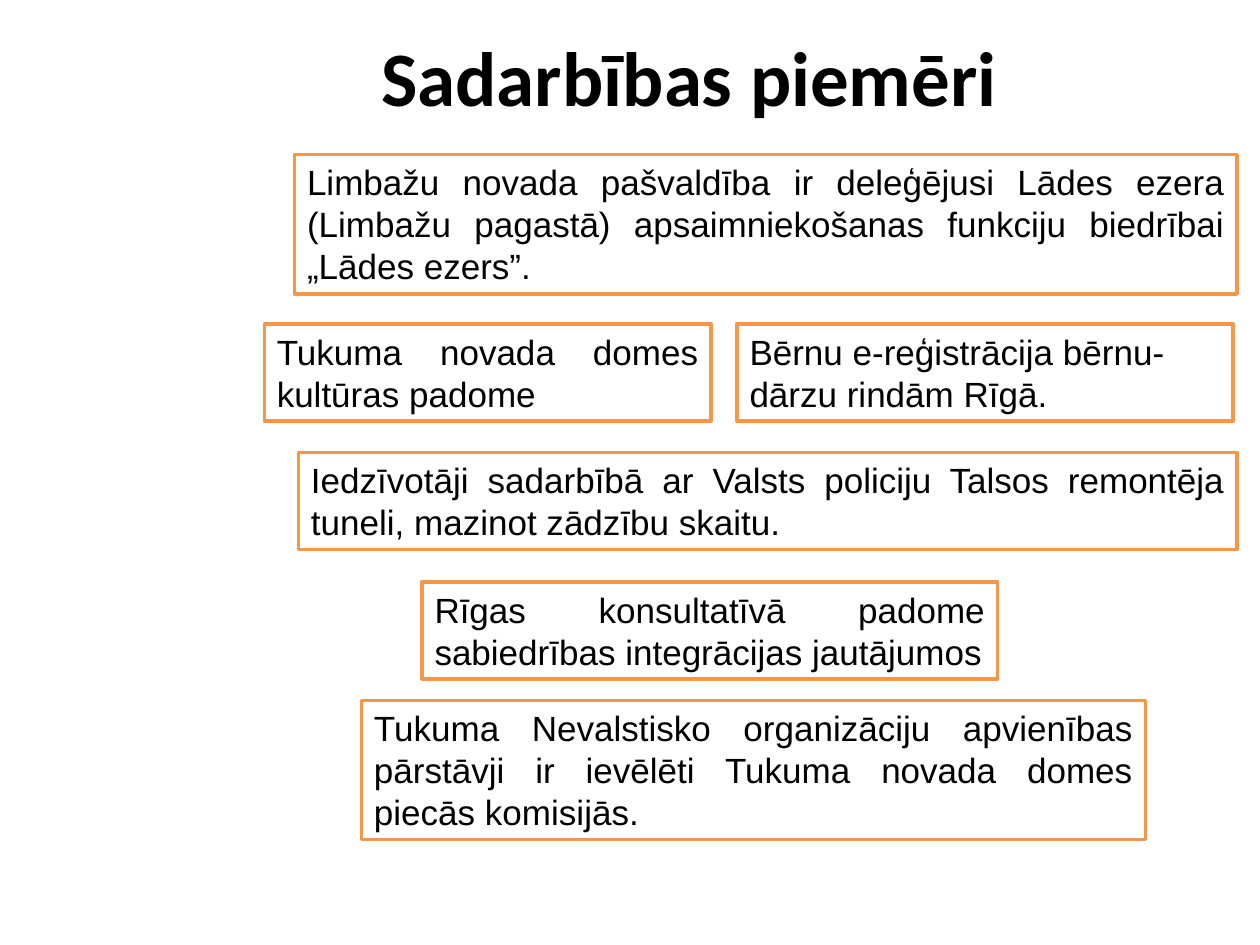
import pptx
import pptx.dml.color
import pptx.enum.shapes
import pptx.enum.text
import pptx.util
from pptx.util import Cm

TITLE = "Sadarbības piemēri"
# left, top, width in cm; number of text lines; justified; text
EXAMPLES = [
    (5.94, 3.12, 19, 3, True,
     "Limbažu novada pašvaldība ir deleģējusi Lādes ezera (Limbažu pagastā) "
     "apsaimniekošanas funkciju biedrībai „Lādes ezers”."),
    (14.86, 6.53, 10, 2, False, "Bērnu e-reģistrācija bērnu-dārzu rindām Rīgā."),
    (5.33, 6.53, 9, 2, True, "Tukuma novada domes kultūras padome"),
    (7.29, 14.12, 15.8, 3, True,
     "Tukuma Nevalstisko organizāciju apvienības pārstāvji ir ievēlēti "
     "Tukuma novada domes piecās komisijās."),
    (6.02, 9.12, 18.92, 2, True,
     "Iedzīvotāji sadarbībā ar Valsts policiju Talsos remontēja tuneli, "
     "mazinot zādzību skaitu."),
    (8.51, 11.73, 11.6, 2, True,
     "Rīgas konsultatīvā padome sabiedrības integrācijas jautājumos"),
]
COLORS = {"text": "000000", "fill": "FFFFFF", "border": "F79646"}
LINE_HEIGHT, BOX_PADDING = 0.85, 0.26


def rgb(name):
    return pptx.dml.color.RGBColor.from_string(COLORS[name])


def set_paragraph(p, align, font, size, bold=False):
    p.alignment = align
    p.font.name = font
    p.font.size = pptx.util.Pt(size)
    p.font.bold = bold
    p.font.color.rgb = rgb("text")


def add_example(s, left, top, width, lines, justified, text):
    height = lines * LINE_HEIGHT + BOX_PADDING
    sp = s.shapes.add_shape(pptx.enum.shapes.MSO_SHAPE.RECTANGLE,
                            Cm(left), Cm(top), Cm(width), Cm(height))
    sp.shadow.inherit = False
    sp.fill.solid()
    sp.fill.fore_color.rgb = rgb("fill")
    sp.line.color.rgb = rgb("border")
    sp.line.width = pptx.util.Pt(2)
    tf = sp.text_frame
    tf.word_wrap = True
    tf.auto_size = pptx.enum.text.MSO_AUTO_SIZE.SHAPE_TO_FIT_TEXT
    tf.vertical_anchor = pptx.enum.text.MSO_ANCHOR.TOP
    tf.text = text
    align = pptx.enum.text.PP_ALIGN
    set_paragraph(tf.paragraphs[0], align.JUSTIFY if justified else align.LEFT, "Arial", 20)


def main():
    """Build the slide of cooperation examples."""
    prs = pptx.Presentation()
    prs.slide_width, prs.slide_height = Cm(25.4), Cm(19.05)
    s = prs.slides.add_slide(prs.slide_layouts[5])
    title = s.shapes.title
    title.left, title.top, title.width, title.height = Cm(6.5), Cm(0.33), Cm(14.8), Cm(2.39)
    tf = title.text_frame
    tf.text = TITLE
    tf.vertical_anchor = pptx.enum.text.MSO_ANCHOR.MIDDLE
    set_paragraph(tf.paragraphs[0], pptx.enum.text.PP_ALIGN.CENTER, "Calibri", 44, True)
    for example in EXAMPLES:
        add_example(s, *example)
    prs.save("out.pptx")


if __name__ == "__main__":
    main()
